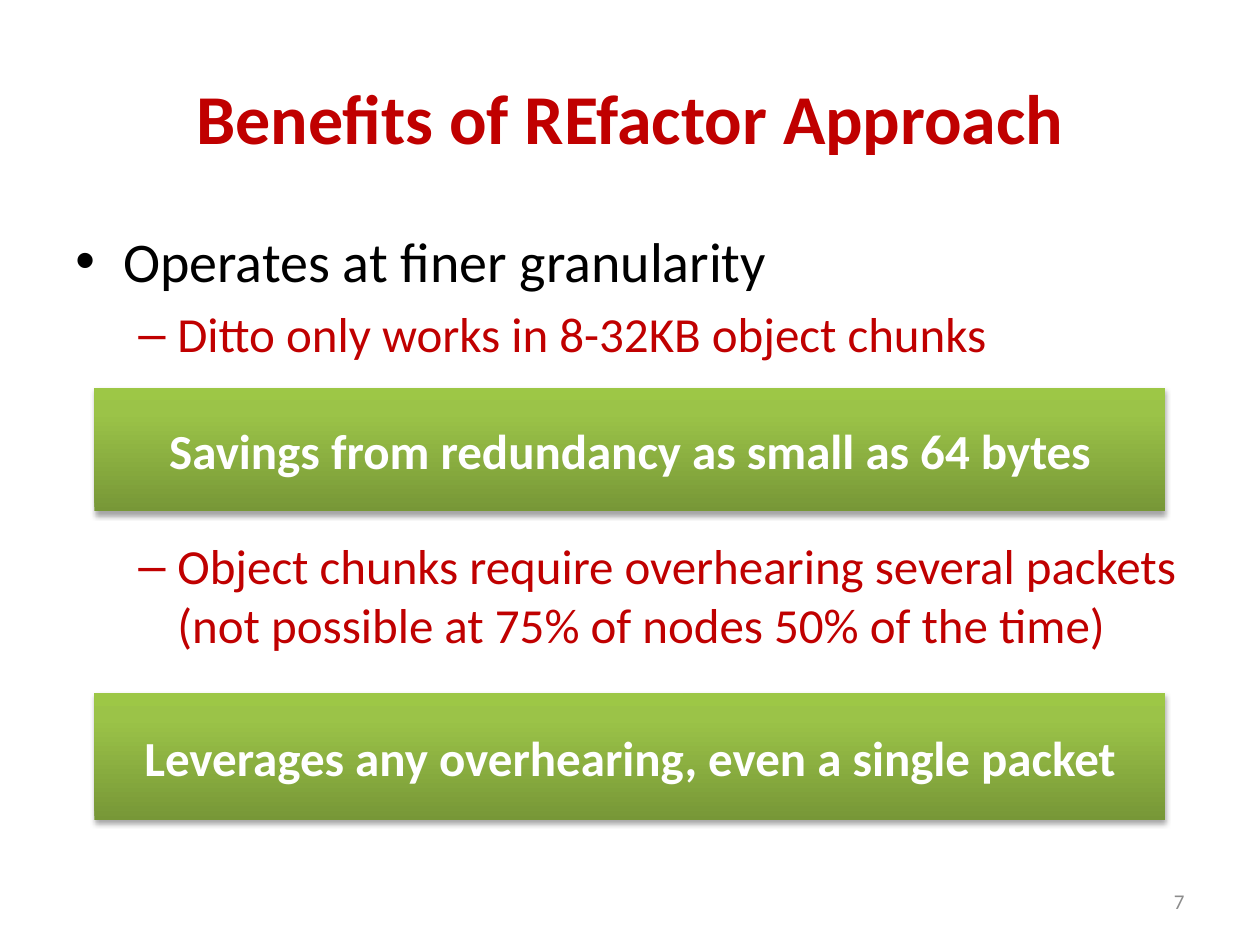
from dataclasses import dataclass
from typing import Optional

from lxml.etree import SubElement
from pptx import Presentation
from pptx.dml.color import RGBColor
from pptx.enum.shapes import MSO_SHAPE as Shape
from pptx.enum.text import MSO_ANCHOR as Anchor, PP_ALIGN as Align
from pptx.oxml import parse_xml
from pptx.oxml.ns import nsdecls, qn
from pptx.util import Emu, Pt

EMU_PER_PX = 9144  # 100 px to the inch
FONT = "Calibri"
COLORS = {
    "red": "C00000",
    "black": "000000",
    "white": "FFFFFF",
    "gray": "8C8C8C",
    "green_dark": "779737",
    "green_mid": "9BC348",
    "green_light": "9DC746",
}
GRADIENT = {0: "green_dark", 80: "green_mid", 100: "green_light"}


@dataclass(frozen=True)
class Box:
    left: int
    top: int
    width: int
    height: int


@dataclass(frozen=True)
class Line:
    text: str
    size: int
    color: str
    bold: bool = False
    align: Align = Align.LEFT


@dataclass(frozen=True)
class Bullet:
    line: Line
    mark: str
    level: int
    margin: int
    hanging: int
    space_before: float


@dataclass(frozen=True)
class Banner:
    box: Box
    text: str


TITLE = Line("Benefits of REfactor Approach", 40, "red", True, Align.CENTER)
PAGE_NUMBER = Line("7", 12, "gray", align=Align.RIGHT)
SUB_BULLET = dict(mark="–", level=1, margin=81, hanging=31)
BULLETS = [
    Bullet(Line("Operates at finer granularity", 32, "black"), "•", 0, 38, 38, 16),
    Bullet(Line("Ditto only works in 8-32KB object chunks", 28, "red"),
           space_before=5.6, **SUB_BULLET),
    # The wide space leaves room for the first banner.
    Bullet(Line("Object chunks require overhearing several packets\n"
                "(not possible at 75% of nodes 50% of the time)", 28, "red"),
           space_before=99, **SUB_BULLET),
]
BANNERS = [
    Banner(Box(75, 308, 850, 98), "Savings from redundancy as small as 64 bytes"),
    Banner(Box(75, 550, 850, 101), "Leverages any overhearing, even a single packet"),
]


def px(length: int) -> Emu:
    return Emu(length * EMU_PER_PX)


def place(box: Box) -> list[Emu]:
    return [px(side) for side in (box.left, box.top, box.width, box.height)]


def write_line(para, line: Line) -> None:
    para.alignment = line.align
    for index, part in enumerate(line.text.split("\n")):
        if index:
            para.add_line_break()
        span = para.add_run()
        span.text = part
        formats = {"name": FONT, "size": Pt(line.size), "bold": line.bold}
        for name, value in formats.items():
            setattr(span.font, name, value)
        span.font.color.rgb = RGBColor.from_string(COLORS[line.color])


def add_text_box(page, box: Box, anchor: Anchor, line: Optional[Line] = None):
    frame = page.shapes.add_textbox(*place(box)).text_frame
    frame.word_wrap = True
    frame.vertical_anchor = anchor
    if line:
        write_line(frame.paragraphs[0], line)
    return frame


def write_bullet(para, bullet: Bullet) -> None:
    write_line(para, bullet.line)
    para.level = bullet.level
    para.space_before = Pt(bullet.space_before)
    props = para._p.get_or_add_pPr()
    props.set("marL", str(px(bullet.margin)))
    props.set("indent", str(px(-bullet.hanging)))
    SubElement(props, qn("a:buFont"), typeface="Arial")
    SubElement(props, qn("a:buChar"), char=bullet.mark)


def add_banner(page, banner: Banner) -> None:
    """Draw a green gradient bar with a soft shadow and a centred message."""
    bar = page.shapes.add_shape(Shape.RECTANGLE, *place(banner.box))
    stops = "".join(
        f'<a:gs pos="{pos * 1000}"><a:srgbClr val="{COLORS[color]}"/></a:gs>'
        for pos, color in GRADIENT.items()
    )
    props = bar._element.spPr
    props.append(parse_xml(
        f'<a:gradFill {nsdecls("a")} rotWithShape="1"><a:gsLst>{stops}</a:gsLst>'
        '<a:lin ang="16200000" scaled="0"/></a:gradFill>'
    ))
    bar.line.fill.background()
    props.append(parse_xml(
        f'<a:effectLst {nsdecls("a")}><a:outerShdw blurRad="{Pt(3.1)}" '
        f'dist="{Pt(1.8)}" dir="5400000" rotWithShape="0">'
        f'<a:srgbClr val="{COLORS["black"]}"><a:alpha val="35000"/></a:srgbClr>'
        '</a:outerShdw></a:effectLst>'
    ))
    frame = bar.text_frame
    formats = {"word_wrap": True, "vertical_anchor": Anchor.MIDDLE}
    formats |= {f"margin_{side}": px(25) for side in ("left", "top", "right", "bottom")}
    for name, value in formats.items():
        setattr(frame, name, value)
    write_line(frame.paragraphs[0], Line(banner.text, 28, "white", True, Align.CENTER))


def main() -> None:
    deck = Presentation()
    deck.slide_width, deck.slide_height = px(1000), px(750)
    page = deck.slides.add_slide(deck.slide_layouts[6])

    add_text_box(page, Box(50, 30, 900, 125), Anchor.MIDDLE, TITLE)
    body = add_text_box(page, Box(50, 175, 900, 495), Anchor.TOP)
    for index, bullet in enumerate(BULLETS):
        write_bullet(body.add_paragraph() if index else body.paragraphs[0], bullet)
    add_text_box(page, Box(717, 695, 233, 40), Anchor.MIDDLE, PAGE_NUMBER)
    for banner in BANNERS:
        add_banner(page, banner)

    deck.save("out.pptx")


if __name__ == "__main__":
    main()
